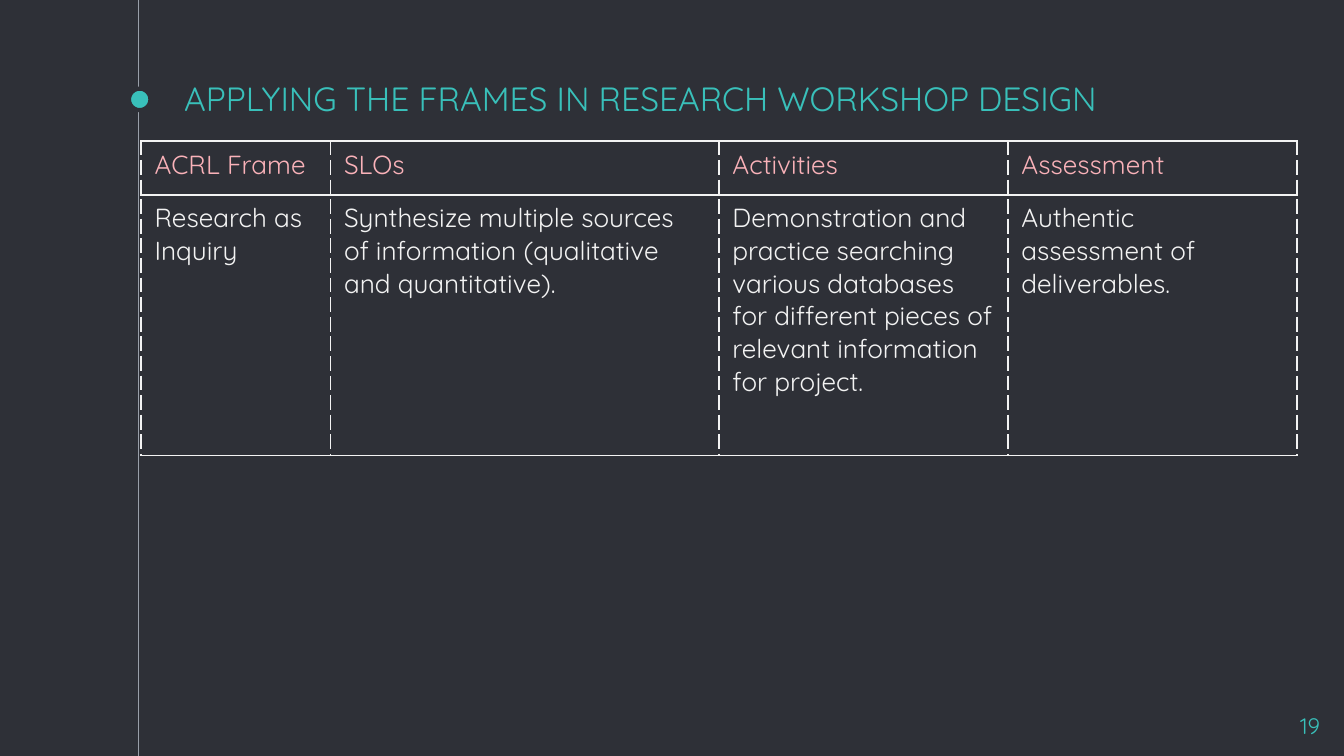
"""Build the research workshop design slide with its frame table."""
from lxml.etree import SubElement
from pptx import Presentation
from pptx.dml.color import RGBColor
from pptx.enum.shapes import MSO_CONNECTOR as Connector, MSO_SHAPE as Shape
from pptx.enum.text import MSO_ANCHOR as Anchor, MSO_AUTO_SIZE as AutoSize, PP_ALIGN as Align
from pptx.oxml.ns import qn
from pptx.util import Inches, Pt

TITLE = "APPLYING THE FRAMES IN RESEARCH WORKSHOP DESIGN"
PAGE_NUMBER = "19"
ROWS = [
    ("ACRL Frame", "SLOs", "Activities", "Assessment"),
    (
        "Research as Inquiry",
        "Synthesize multiple sources of information (qualitative and quantitative).",
        "Demonstration and practice searching various databases for different "
        "pieces of relevant information for project.",
        "Authentic assessment of deliverables.",
    ),
]
COLUMN_WIDTHS = [1.41, 2.89, 2.15, 2.15]
ROW_HEIGHTS = [0.4, 1.94]
BORDERS = {"a:lnL": "sysDash", "a:lnR": "sysDash", "a:lnT": "solid", "a:lnB": "solid"}
PAGE_WIDTH = 10
PAGE_HEIGHT = PAGE_WIDTH * 9 / 16
RAIL_X = 1.03
DOT_SIZE = 0.16
DOT_CENTER = (1.04, 0.74)
THEME = {
    "font": "Quicksand",
    "background": "2E3037",
    "accent": "39C0BA",
    "rail": "999FA9",
    "header": "FAB2B9",
    "body": "F3F3F3",
    "title_size": 18,
    "table_size": 14,
    "number_size": 12,
}


def color(name):
    return RGBColor.from_string(THEME[name])


def write(frame, text, size, color_name, align=Align.LEFT):
    para = frame.paragraphs[0]
    para.alignment = align
    span = para.add_run()
    span.text = text
    span.font.name = THEME["font"]
    span.font.size = Pt(THEME[size])
    span.font.bold = False
    span.font.color.rgb = color(color_name)


def set_frame(frame, anchor):
    frame.word_wrap = True
    frame.auto_size = AutoSize.NONE
    frame.vertical_anchor = anchor
    frame.margin_left = frame.margin_right = Inches(0.1)
    frame.margin_top = frame.margin_bottom = Inches(0.1)


def set_borders(cell):
    properties = cell._tc.get_or_add_tcPr()
    for position, (tag, dash) in enumerate(BORDERS.items()):
        line = SubElement(properties, qn(tag), w=str(Pt(1)))
        properties.insert(position, line)
        fill = SubElement(line, qn("a:solidFill"))
        SubElement(fill, qn("a:srgbClr"), val=THEME["body"])
        SubElement(line, qn("a:prstDash"), val=dash)


def add_rail(page):
    rail = page.shapes.add_connector(
        Connector.STRAIGHT, Inches(RAIL_X), 0, Inches(RAIL_X), Inches(PAGE_HEIGHT))
    rail.line.color.rgb = color("rail")
    rail.line.width = Pt(0.75)
    SubElement(rail._element.spPr, qn("a:effectLst"))
    left, top = (Inches(center - DOT_SIZE / 2) for center in DOT_CENTER)
    dot = page.shapes.add_shape(Shape.OVAL, left, top, Inches(DOT_SIZE), Inches(DOT_SIZE))
    dot.shadow.inherit = False
    dot.fill.solid()
    dot.fill.fore_color.rgb = color("accent")
    dot.line.color.rgb = color("background")
    dot.line.width = Pt(2.25)


def add_title(page):
    title = page.shapes.title
    title.left, title.top = Inches(1.27), Inches(0.6)
    title.width, title.height = Inches(7.5), Inches(0.38)
    set_frame(title.text_frame, Anchor.BOTTOM)
    write(title.text_frame, TITLE, "title_size", "accent")


def add_page_number(page):
    box = page.shapes.add_textbox(Inches(9.32), Inches(5.2), Inches(0.6), Inches(0.34))
    set_frame(box.text_frame, Anchor.TOP)
    write(box.text_frame, PAGE_NUMBER, "number_size", "accent", Align.RIGHT)


def add_frame_table(page):
    table = page.shapes.add_table(
        len(ROWS), len(COLUMN_WIDTHS), Inches(1.05), Inches(1.05),
        Inches(sum(COLUMN_WIDTHS)), Inches(sum(ROW_HEIGHTS))).table
    table.horz_banding = False
    for column, width in zip(table.columns, COLUMN_WIDTHS):
        column.width = Inches(width)
    for row, height, texts, color_name in zip(table.rows, ROW_HEIGHTS, ROWS, ("header", "body")):
        row.height = Inches(height)
        for cell, text in zip(row.cells, texts):
            cell.fill.background()
            set_borders(cell)
            write(cell.text_frame, text, "table_size", color_name)


def main():
    deck = Presentation()
    deck.slide_width, deck.slide_height = Inches(PAGE_WIDTH), Inches(PAGE_HEIGHT)
    page = deck.slides.add_slide(deck.slide_layouts.get_by_name("Title Only"))
    page.background.fill.solid()
    page.background.fill.fore_color.rgb = color("background")
    add_rail(page)
    add_title(page)
    add_page_number(page)
    add_frame_table(page)
    deck.save("out.pptx")


if __name__ == "__main__":
    main()
